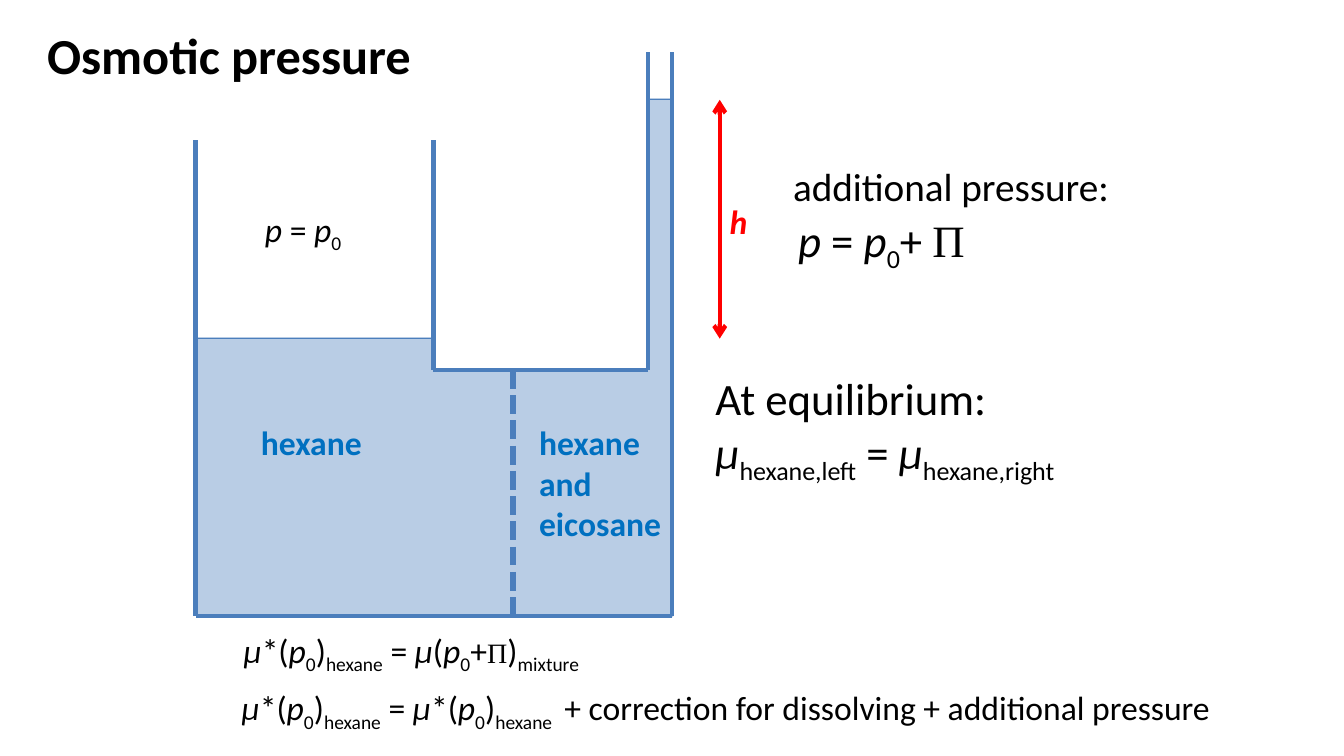
from dataclasses import dataclass, field

from lxml import etree
from pptx import Presentation
from pptx import util as u
from pptx.dml import color
from pptx.enum import dml, shapes, text
from pptx.oxml import ns

LIQUID, GLASS, LABEL, RED, BLACK = "B9CDE5", "4B7EBC", "0070C0", "FF0000", "000000"

# Vessel geometry, in points
LEFT, INNER_LEFT, MEMBRANE, TUBE_LEFT, RIGHT = 139.7, 309.6, 366.5, 463, 480.2
TUBE_TOP, TUBE_LEVEL, LEFT_TOP, LEFT_LEVEL, CEILING, BOTTOM = 37.4, 71.3, 100.1, 241.9, 264.2, 439.9
HEIGHT_X = 514.1


@dataclass
class Run:
    text: str
    format: dict = field(default_factory=dict)
    subscript: bool = False


@dataclass
class Area:
    left: float
    top: float
    right: float
    bottom: float


@dataclass
class Line:
    start: tuple[float, float]
    end: tuple[float, float]
    width: float = 3
    color: str = GLASS
    dashed: bool = False
    arrows: bool = False


@dataclass
class Label:
    left: float
    top: float
    width: float
    height: float
    paragraphs: list[list[Run]]
    size: float = 24
    color: str = BLACK
    format: dict = field(default_factory=dict)


def italic(symbol: str) -> Run:
    return Run(symbol, {"italic": True})


def sub(index: str) -> Run:
    return Run(index, subscript=True)


def greek(symbol: str, size: float) -> Run:
    return Run(symbol, {"name": "Times New Roman", "size": u.Pt(size)})


EQUALS = Run(" = ")
P0 = [italic("p"), sub("0")]
P_EQUALS_P0 = [italic("p"), EQUALS, *P0]
PURE_POTENTIAL = [italic("µ"), Run("*("), *P0, Run(")")]

AREAS = [
    Area(LEFT, LEFT_LEVEL, INNER_LEFT, 278.6),
    Area(LEFT, 266.4, 474.5, 439.2),
    Area(TUBE_LEFT, TUBE_LEVEL, RIGHT, BOTTOM),
]

WALLS = [
    [(RIGHT, TUBE_TOP), (RIGHT, BOTTOM), (LEFT, BOTTOM), (LEFT, LEFT_TOP)],
    [(INNER_LEFT, LEFT_TOP), (INNER_LEFT, CEILING), (TUBE_LEFT, CEILING), (TUBE_LEFT, TUBE_TOP)],
]

LINES = [Line(*ends) for wall in WALLS for ends in zip(wall, wall[1:])] + [
    Line((MEMBRANE, CEILING), (MEMBRANE, BOTTOM), 4.5, dashed=True),
    Line((LEFT, LEFT_LEVEL), (INNER_LEFT, LEFT_LEVEL), 0.75),
    Line((TUBE_LEFT, TUBE_LEVEL), (RIGHT, TUBE_LEVEL), 0.75),
    Line((HEIGHT_X, TUBE_LEVEL), (HEIGHT_X, LEFT_LEVEL), color=RED, arrows=True),
]

BOLD = {"bold": True}
LABELS = [
    Label(26.6, 13.7, 566.6, 51.1, [[Run("Osmotic pressure")]], 36, format=BOLD),
    Label(179.3, 298.1, 141.8, 36, [[Run("hexane")]], color=LABEL, format=BOLD),
    Label(378, 298.1, 141.8, 94.3,
          [[Run(word)] for word in ("hexane", "and", "eicosane")], color=LABEL, format=BOLD),
    Label(HEIGHT_X, 139.7, 28.1, 36, [[Run("h")]], color=RED,
          format={"bold": True, "italic": True}),
    Label(182.2, 145.4, 108, 36, [P_EQUALS_P0]),
    Label(504, 261.4, 371.5, 85,
          [[Run("At equilibrium:")],
           [italic("µ"), sub("hexane,left"), EQUALS, italic("µ"), sub("hexane,right")]], 32),
    Label(167, 446.4, 691.2, 36,
          [[*PURE_POTENTIAL, sub("hexane"), EQUALS, italic("µ"), Run("("), *P0, Run("+"),
            greek("Π", 20), Run(")"), sub("mixture")]]),
    Label(165.6, 487.4, 794.2, 36,
          [[*PURE_POTENTIAL, sub("hexane"), EQUALS, *PURE_POTENTIAL, sub("hexane "),
            Run(" + correction for dissolving + additional pressure")]]),
]

PRESSURE_LABELS = [
    Label(563, 148.3, 184.3, 46.1, [[*P_EQUALS_P0, Run("+ "), greek("Π", 32)]], 32),
    Label(559.4, 112.3, 242.6, 41, [[Run("additional pressure:")]], 28),
]


def rgb(value: str) -> color.RGBColor:
    return color.RGBColor.from_string(value)


def draw_area(container, area: Area) -> None:
    shape = container.add_shape(
        shapes.MSO_SHAPE.RECTANGLE, u.Pt(area.left), u.Pt(area.top),
        u.Pt(area.right - area.left), u.Pt(area.bottom - area.top))
    shape.shadow.inherit = False
    shape.fill.solid()
    shape.fill.fore_color.rgb = rgb(LIQUID)
    shape.line.color.rgb = rgb(LIQUID)
    shape.line.width = u.Pt(2)


def draw_line(container, line: Line) -> None:
    ends = [u.Pt(value) for value in (*line.start, *line.end)]
    connector = container.add_connector(shapes.MSO_CONNECTOR.STRAIGHT, *ends)
    connector.line.color.rgb = rgb(line.color)
    connector.line.width = u.Pt(line.width)
    if line.dashed:
        connector.line.dash_style = dml.MSO_LINE.SQUARE_DOT
    properties = connector.element.spPr
    if line.arrows:
        outline = properties.find(ns.qn("a:ln"))
        for end in ("a:headEnd", "a:tailEnd"):
            etree.SubElement(outline, ns.qn(end), type="arrow")
    etree.SubElement(properties, ns.qn("a:effectLst"))


def draw_label(container, label: Label) -> None:
    box = container.add_textbox(
        u.Pt(label.left), u.Pt(label.top), u.Pt(label.width), u.Pt(label.height))
    frame = box.text_frame
    frame.word_wrap = True
    frame.auto_size = text.MSO_AUTO_SIZE.SHAPE_TO_FIT_TEXT
    base = {"name": "Calibri", "size": u.Pt(label.size), **label.format}
    for index, runs in enumerate(label.paragraphs):
        paragraph = frame.add_paragraph() if index else frame.paragraphs[0]
        for item in runs:
            run = paragraph.add_run()
            run.text = item.text
            for name, value in {**base, **item.format}.items():
                setattr(run.font, name, value)
            run.font.color.rgb = rgb(label.color)
            if item.subscript:
                run._r.get_or_add_rPr().set("baseline", "-25000")


def main() -> None:
    presentation = Presentation()
    presentation.slide_width, presentation.slide_height = u.Pt(960), u.Pt(540)
    slide = presentation.slides.add_slide(presentation.slide_layouts[6])
    liquid = slide.shapes.add_group_shape()
    for area in AREAS:
        draw_area(liquid.shapes, area)
    for line in LINES:
        draw_line(slide.shapes, line)
    for label in LABELS:
        draw_label(slide.shapes, label)
    pressure = slide.shapes.add_group_shape()
    for label in PRESSURE_LABELS:
        draw_label(pressure.shapes, label)
    presentation.save("out.pptx")


if __name__ == "__main__":
    main()
